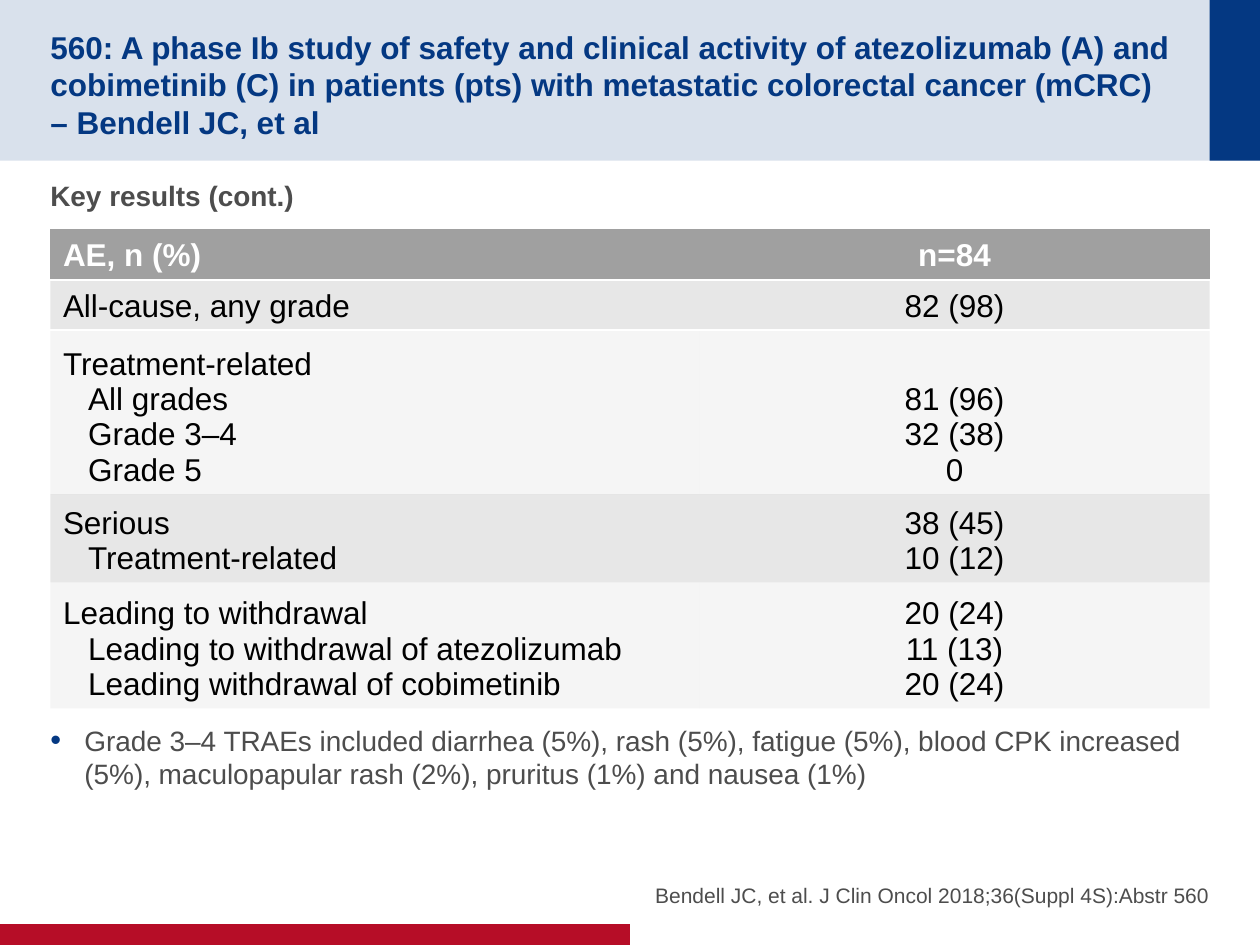
from lxml.etree import SubElement
from pptx import Presentation
from pptx.dml.color import RGBColor
from pptx.enum.shapes import MSO_SHAPE
from pptx.enum.text import MSO_ANCHOR, PP_ALIGN
from pptx.oxml import parse_xml
from pptx.oxml.ns import nsdecls, qn
from pptx.util import Inches, Pt

NAVY = RGBColor(0x04, 0x38, 0x82)
RED = RGBColor(0xB6, 0x0D, 0x27)
GREY = RGBColor(0xA0, 0xA0, 0xA0)
TEXT_GREY = RGBColor(0x4D, 0x4D, 0x4D)
WHITE = RGBColor(0xFF, 0xFF, 0xFF)
BLACK = RGBColor(0, 0, 0)

WIDTH, HEIGHT = Inches(10), Inches(7.5)
MARGIN = 0.04 * WIDTH
CONTENT = WIDTH - 2 * MARGIN
HEADER = 0.17 * HEIGHT
LINE, CELL_PADDING = Inches(0.28), Inches(0.1)
PLAIN_TABLE = "{2D5ABB26-0587-4C30-8999-92F81FD0307C}"

TITLE = ("560: A phase Ib study of safety and clinical activity of atezolizumab (A) and "
         "cobimetinib (C) in patients (pts) with metastatic colorectal cancer (mCRC) "
         "\v– Bendell JC, et al")
HEADING = "Key results (cont.)"
FINDING = ("Grade 3–4 TRAEs included diarrhea (5%), rash (5%), fatigue (5%), blood CPK increased "
           "(5%), maculopapular rash (2%), pruritus (1%) and nausea (1%)")
CITATION = "Bendell JC, et al. J Clin Oncol 2018;36(Suppl 4S):Abstr 560"
ADVERSE_EVENTS = [
    (["AE, n (%)"], ["n=84"]),
    (["All-cause, any grade"], ["82 (98)"]),
    (["Treatment-related", "All grades", "Grade 3–4", "Grade 5"],
     ["81 (96)", "32 (38)", "0"]),
    (["Serious", "Treatment-related"], ["38 (45)", "10 (12)"]),
    (["Leading to withdrawal", "Leading to withdrawal of atezolizumab",
      "Leading withdrawal of cobimetinib"], ["20 (24)", "11 (13)", "20 (24)"]),
]


def set_fill(fill, element, color, opacity=100):
    fill.solid()
    fill.fore_color.rgb = color
    if opacity < 100:
        color_element = element.find(qn("a:solidFill")).find(qn("a:srgbClr"))
        SubElement(color_element, qn("a:alpha"), val=str(opacity * 1000))


def format_para(para, size, color, bold=False, align=PP_ALIGN.LEFT):
    para.alignment = align
    for span in para.runs:
        span.font.name = "Arial"
        span.font.size = Pt(size)
        span.font.bold = bold
        span.font.color.rgb = color


def add_block(page, box, color, opacity=100):
    block = page.shapes.add_shape(MSO_SHAPE.RECTANGLE, *map(int, box))
    block.shadow.inherit = False
    block.line.fill.background()
    set_fill(block.fill, block._element.spPr, color, opacity)


def add_text(page, box, lines, anchor=MSO_ANCHOR.TOP, top=0):
    frame = page.shapes.add_textbox(*map(int, box)).text_frame
    frame.word_wrap = True
    frame.vertical_anchor = anchor
    frame.margin_left = frame.margin_right = frame.margin_bottom = 0
    frame.margin_top = Inches(top)
    frame.text = "\n".join(lines)
    return frame.paragraphs


def add_header(page, box):
    left, top, width, height = box
    add_block(page, box, NAVY, 15)
    add_block(page, (left + width - MARGIN, top, MARGIN, height), NAVY)
    title_box = (left + MARGIN, top + 0.16 * height, 0.9 * width, 0.69 * height)
    para, = add_text(page, title_box, [TITLE], MSO_ANCHOR.MIDDLE, 0.05)
    format_para(para, 18, NAVY, bold=True)


def add_results(page, box):
    heading, finding = add_text(page, box, [HEADING, FINDING], top=0.05)
    format_para(heading, 16, TEXT_GREY, bold=True)
    heading.space_after = Pt(4)
    format_para(finding, 16, TEXT_GREY)
    finding.space_before = Pt(288)
    finding.space_after = Pt(4)
    properties = finding._p.get_or_add_pPr()
    properties.set("marL", str(Inches(0.27)))
    properties.set("indent", str(-Inches(0.27)))
    bullet_color = SubElement(properties, qn("a:buClr"))
    SubElement(bullet_color, qn("a:srgbClr"), val=str(NAVY))
    SubElement(properties, qn("a:buSzPct"), val="110000")
    SubElement(properties, qn("a:buFont"), typeface="Arial")
    SubElement(properties, qn("a:buChar"), char="•")


def add_header_rule(cell, side):
    cell._tc.get_or_add_tcPr().insert(0, parse_xml(
        f'<a:{side} {nsdecls("a")} w="{Pt(1)}"><a:solidFill>'
        f'<a:srgbClr val="{WHITE}"/></a:solidFill></a:{side}>'))


def add_event_table(page, box):
    left, top, width = map(int, box)
    heights = [len(labels) * LINE + CELL_PADDING for labels, _ in ADVERSE_EVENTS]
    frame = page.shapes.add_table(len(heights), 2, left, top, width, sum(heights))
    table = frame.table
    table._tbl.tblPr.find(qn("a:tableStyleId")).text = PLAIN_TABLE
    table.columns[0].width = int(0.56 * width)
    table.columns[1].width = width - table.columns[0].width
    for row, (height, texts) in enumerate(zip(heights, ADVERSE_EVENTS)):
        table.rows[row].height = height
        is_header = row == 0
        opacity = 100 if is_header else 25 if row % 2 else 10
        for column, lines in enumerate(texts):
            cell = table.cell(row, column)
            cell.text_frame.text = "\n".join(lines)
            cell.vertical_anchor = MSO_ANCHOR.BOTTOM
            set_fill(cell.fill, cell._tc.get_or_add_tcPr(), GREY, opacity)
            if row < 2:
                add_header_rule(cell, "lnB" if is_header else "lnT")
            for index, para in enumerate(cell.text_frame.paragraphs):
                format_para(para, 18, WHITE if is_header else BLACK, is_header,
                            PP_ALIGN.CENTER if column else PP_ALIGN.LEFT)
                if index and column == 0:
                    para._p.get_or_add_pPr().set("marL", str(Inches(0.2)))


def add_footer(page, box):
    left, top, width, height = box
    bar = 0.2 * height
    add_block(page, (left, top + height - bar, 0.5 * width, bar), RED)
    citation_box = (left + 0.51 * width, top, 0.45 * width, 0.64 * height)
    para, = add_text(page, citation_box, [CITATION], MSO_ANCHOR.BOTTOM)
    format_para(para, 12, TEXT_GREY, align=PP_ALIGN.RIGHT)
    para.space_after = Pt(4)


def main():
    deck = Presentation()
    deck.slide_width, deck.slide_height = WIDTH, HEIGHT
    page = deck.slides.add_slide(deck.slide_layouts[6])
    add_header(page, (0, 0, WIDTH, HEADER))
    add_results(page, (MARGIN, Inches(1.37), CONTENT, Inches(5.19)))
    add_event_table(page, (MARGIN, Inches(1.82), CONTENT))
    add_footer(page, (0, Inches(6.67), WIDTH, HEIGHT - Inches(6.67)))
    deck.save("out.pptx")


if __name__ == "__main__":
    main()
